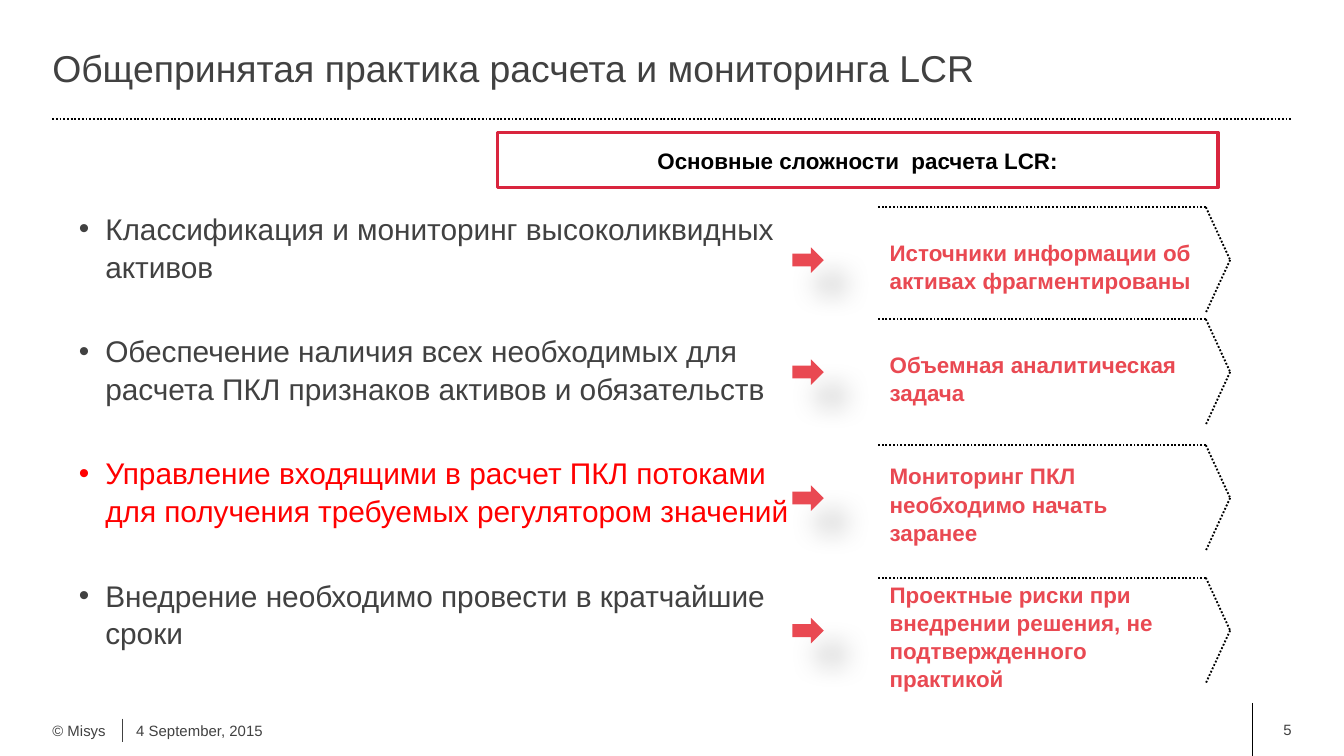
from pptx import Presentation
from pptx.dml.color import RGBColor
from pptx.enum.dml import MSO_LINE
from pptx.enum.shapes import MSO_CONNECTOR, MSO_SHAPE
from pptx.enum.text import MSO_ANCHOR as Anchor, PP_ALIGN as Align
from pptx.oxml import parse_xml
from pptx.oxml.ns import nsdecls
from pptx.util import Pt

GREY, BLACK, WHITE = "414141", "000000", "FFFFFF"
CORAL, CRIMSON, RED = "E94952", "D9253E", "FF0000"
LINE_SPACING = 1.05

POINTS = [
    ("Классификация и мониторинг высоколиквидных активов", GREY),
    ("Обеспечение наличия всех необходимых для расчета ПКЛ признаков активов и обязательств", GREY),
    ("Управление входящими в расчет ПКЛ потоками для получения требуемых регулятором значений", RED),
    ("Внедрение необходимо провести в кратчайшие сроки", GREY),
]
DIFFICULTIES = [
    (111, "Источники информации об активах фрагментированы"),
    (171, "Объемная аналитическая задача"),
    (238.5, "Мониторинг ПКЛ необходимо начать заранее"),
    (309.5, "Проектные риски при внедрении решения, не подтвержденного практикой"),
]


def color(value):
    return RGBColor.from_string(value)


def apply(target, values):
    for name, value in values.items():
        setattr(target, name, value)


class SlideBuilder:
    font_name = "Arial"

    def __init__(self, page):
        self.page = page

    def fill_para(self, para, text, size, ink, bold=False, **format_values):
        apply(para, {"line_spacing": LINE_SPACING, **format_values})
        span = para.add_run()
        span.text = text
        apply(span.font, {"name": self.font_name, "size": Pt(size), "bold": bold})
        span.font.color.rgb = color(ink)

    def frame(self, left, top, width, height, inset=(0, 0), anchor=Anchor.MIDDLE):
        box = self.page.shapes.add_textbox(Pt(left), Pt(top), Pt(width), Pt(height))
        side, edge = map(Pt, inset)
        apply(box.text_frame, {
            "word_wrap": True, "vertical_anchor": anchor,
            "margin_left": side, "margin_right": side,
            "margin_top": edge, "margin_bottom": edge,
        })
        return box.text_frame

    def text(self, area, text, size, ink=GREY, bold=False, align=Align.LEFT, inset=(0, 0)):
        frame = self.frame(*area, inset)
        self.fill_para(frame.paragraphs[0], text, size, ink, bold, alignment=align)

    def bullets(self, area, items, size, gap):
        frame = self.frame(*area, anchor=Anchor.TOP)
        for index, (text, ink) in enumerate(items):
            para = frame.add_paragraph() if index else frame.paragraphs[0]
            properties = para._p.get_or_add_pPr()
            properties.set("marL", str(Pt(28.4)))
            properties.set("indent", str(-Pt(14.2)))
            properties.append(parse_xml(f'<a:buFont {nsdecls("a")} typeface="{self.font_name}"/>'))
            properties.append(parse_xml(f'<a:buChar {nsdecls("a")} char="•"/>'))
            self.fill_para(para, text, size, ink, space_before=Pt(gap if index else 0))

    def line(self, start, end, width=1, ink=BLACK, dotted=True):
        line = self.page.shapes.add_connector(
            MSO_CONNECTOR.STRAIGHT, *map(Pt, start), *map(Pt, end))
        line.line.color.rgb = color(ink)
        line.line.width = Pt(width)
        if dotted:
            line.line.dash_style = MSO_LINE.ROUND_DOT
        line._element.spPr.append(parse_xml(f'<a:effectLst {nsdecls("a")}/>'))

    def shape(self, kind, area, fill):
        shape = self.page.shapes.add_shape(kind, *map(Pt, area))
        shape.shadow.inherit = False
        shape.fill.solid()
        shape.fill.fore_color.rgb = color(fill)
        shape.line.fill.background()
        return shape

    def banner(self, area, text):
        box = self.shape(MSO_SHAPE.RECTANGLE, area, WHITE)
        box.line.color.rgb = color(CRIMSON)
        box.line.width = Pt(2)
        box.text_frame.vertical_anchor = Anchor.MIDDLE
        self.fill_para(box.text_frame.paragraphs[0], text, 12, BLACK, True, alignment=Align.CENTER)

    def arrow(self, left, top):
        arrow = self.shape(MSO_SHAPE.RIGHT_ARROW, (left, top, 16.8, 13.7), CORAL)
        arrow._element.spPr.effectLst.append(parse_xml(
            f'<a:outerShdw {nsdecls("a")} blurRad="{Pt(15)}" dist="{Pt(18)}" dir="2700000">'
            f'<a:srgbClr val="{BLACK}"><a:alpha val="26000"/></a:srgbClr></a:outerShdw>'))

    def difficulty(self, top, text):
        left, shoulder, tip, height = 470, 646, 659, 56.5
        middle = top + height / 2
        self.arrow(424.5, top + 21.5)
        self.text((469.5, top + 2.75, 176.5, 57), text, 12, CORAL, True, inset=(7.2, 3.6))
        self.line((shoulder, top), (tip, middle))
        self.line((tip, middle), (shoulder, top + height))
        self.line((shoulder, top), (left, top))


def main():
    deck = Presentation()
    apply(deck, {"slide_width": Pt(720), "slide_height": Pt(405)})
    slide = SlideBuilder(deck.slides.add_slide(deck.slide_layouts[6]))

    slide.line((671, 376.5), (671, 405), 0.75, dotted=False)
    slide.line((28, 64), (692, 64))
    slide.line((65.5, 385), (65.5, 397.5), 0.5, GREY, dotted=False)
    slide.text((671, 376.5, 21, 28), "5", 8, align=Align.RIGHT)
    slide.bullets((28, 112, 395, 278.5), POINTS, 16, 25.2)
    slide.text((28, 14.5, 663, 42.5), "Общепринятая практика расчета и мониторинга LCR", 20)
    slide.text((28, 382.5, 37.5, 17), "© Misys", 8)
    slide.text((73, 382.5, 116, 17), "4 September, 2015", 8)
    for top, text in DIFFICULTIES:
        slide.difficulty(top, text)
    slide.banner((266.5, 71, 386, 29.5), "Основные сложности  расчета LCR:")

    deck.save("out.pptx")


if __name__ == "__main__":
    main()
